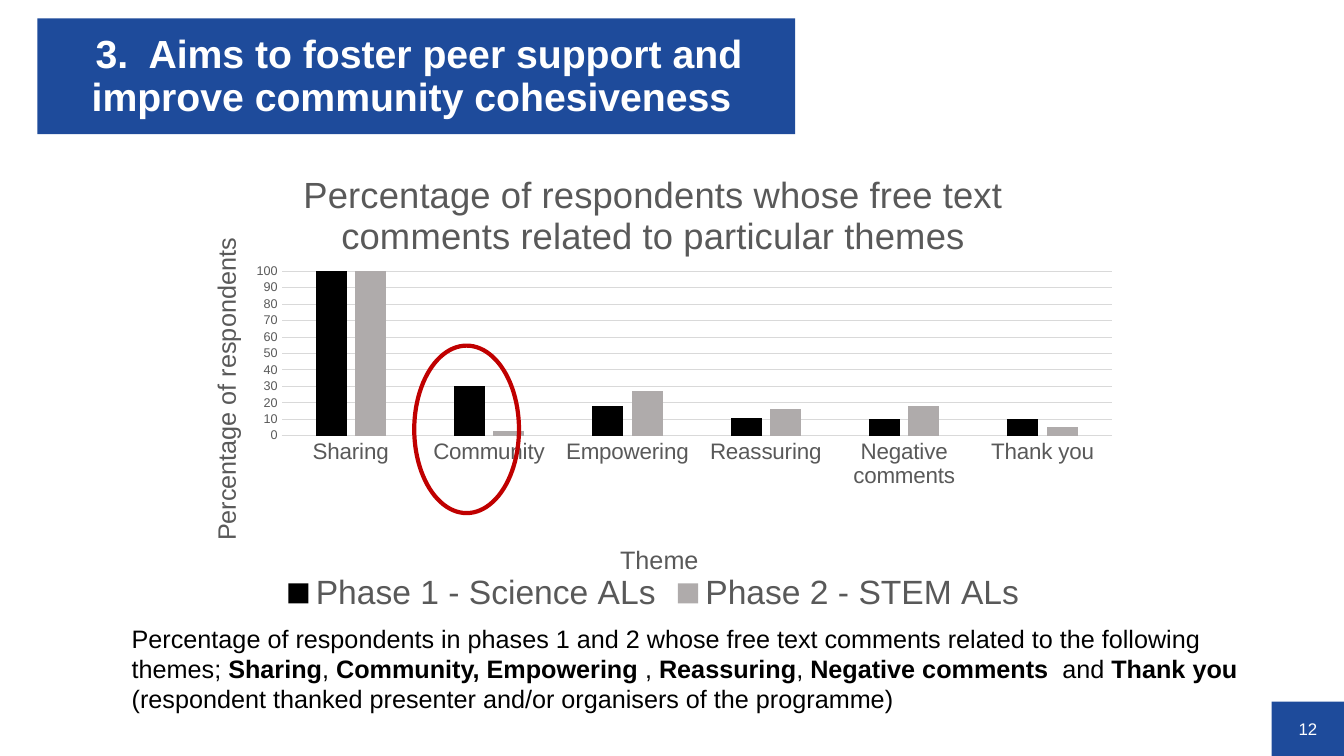
from dataclasses import dataclass

from lxml.etree import SubElement
from pptx import Presentation
from pptx.chart.data import CategoryChartData
from pptx.dml.color import RGBColor
from pptx.enum.chart import XL_CHART_TYPE, XL_LEGEND_POSITION, XL_TICK_MARK
from pptx.enum.shapes import MSO_SHAPE
from pptx.enum.text import MSO_ANCHOR, PP_ALIGN
from pptx.oxml import parse_xml
from pptx.oxml.ns import nsdecls, qn
from pptx.util import Cm, Pt


@dataclass(frozen=True)
class Theme:
    font: str = "Arial"
    blue: RGBColor = RGBColor(0x1E, 0x4B, 0x9B)
    red: RGBColor = RGBColor(0xC0, 0x00, 0x00)
    white: RGBColor = RGBColor(0xFF, 0xFF, 0xFF)
    black: RGBColor = RGBColor(0x00, 0x00, 0x00)
    silver: RGBColor = RGBColor(0xAF, 0xAB, 0xAB)
    label: RGBColor = RGBColor(0x59, 0x59, 0x59)
    grid: RGBColor = RGBColor(0xD9, 0xD9, 0xD9)
    heading: int = 28
    chart_title: int = 26
    legend: int = 24
    body: int = 18
    category: int = 16
    page: int = 12
    scale: int = 9


THEME = Theme()

CATEGORIES = ["Sharing", "Community", "Empowering", "Reassuring",
              "Negative comments", "Thank you"]
SERIES = {
    "Phase 1 - Science ALs": ([100, 30, 18, 11, 10, 10], THEME.black),
    "Phase 2 - STEM ALs": ([100, 3, 27, 16, 18, 5], THEME.silver),
}
# Caption pieces: (text, bold)
CAPTION = [
    ("Percentage of respondents in phases 1 and 2 whose free text comments "
     "related to the following themes; ", False),
    ("Sharing", True), (", ", False),
    ("Community, Empowering", True), (" , ", False),
    ("Reassuring", True), (", ", False),
    ("Negative comments", True), ("  and ", False),
    ("Thank you", True),
    (" (respondent thanked presenter and/or organisers of the programme)", False),
]


def apply_format(target, values):
    for name, value in values.items():
        setattr(target, name, value)


def style_font(font, size, color, bold=False):
    apply_format(font, {"name": THEME.font, "size": Pt(size), "bold": bold})
    font.color.rgb = color


def style_line(line, color, width):
    line.color.rgb = color
    line.width = Pt(width)


def place_by_fraction(layout, **fractions):
    """Fill a chart layout element with fractions of the chart area."""
    manual = SubElement(layout, qn("c:manualLayout"))
    if "w" in fractions:
        SubElement(manual, qn("c:layoutTarget")).set("val", "inner")
    for mode in ("xMode", "yMode"):
        SubElement(manual, qn(f"c:{mode}")).set("val", "edge")
    for name, value in fractions.items():
        SubElement(manual, qn(f"c:{name}")).set("val", str(value))


def add_heading(slide, box):
    title = slide.shapes.title
    apply_format(title, dict(zip(("left", "top", "width", "height"), box)))
    title.fill.solid()
    title.fill.fore_color.rgb = THEME.blue
    frame = title.text_frame
    apply_format(frame, {
        "margin_left": Cm(0.1), "margin_top": Cm(0.05), "margin_right": 0,
        "margin_bottom": 0, "word_wrap": True,
        "vertical_anchor": MSO_ANCHOR.MIDDLE,
    })
    paragraph = frame.paragraphs[0]
    paragraph.text = ("3.  Aims to foster peer support and "
                      "improve community cohesiveness")
    apply_format(paragraph, {"alignment": PP_ALIGN.LEFT, "line_spacing": 0.9})
    properties = paragraph._p.get_or_add_pPr()
    properties.set("marL", str(Cm(1.27)))
    properties.set("indent", str(Cm(0.1)))
    style_font(paragraph.runs[0].font, THEME.heading, THEME.white, True)


def add_axis_title(axis, text, x, y):
    title = axis.axis_title
    paragraph = title.text_frame.paragraphs[0]
    paragraph.text = text
    style_font(paragraph.runs[0].font, THEME.body, THEME.label)
    layout = title._element.find(qn("c:layout"))
    if layout is None:
        layout = parse_xml(f"<c:layout {nsdecls('c')}/>")
        title._element.find(qn("c:tx")).addnext(layout)
    place_by_fraction(layout, x=x, y=y)


def add_theme_chart(slide, box):
    data = CategoryChartData()
    data.categories = CATEGORIES
    for name, (values, _) in SERIES.items():
        data.add_series(name, values)
    chart = slide.shapes.add_chart(
        XL_CHART_TYPE.COLUMN_CLUSTERED, *box, data).chart
    style_font(chart.font, 10, THEME.black)

    # Title and legend
    paragraph = chart.chart_title.text_frame.paragraphs[0]
    paragraph.text = ("Percentage of respondents whose free text comments "
                      "related to particular themes")
    style_font(paragraph.runs[0].font, THEME.chart_title, THEME.label)
    chart.chart_title.include_in_layout = False
    chart.has_legend = True
    apply_format(chart.legend, {"position": XL_LEGEND_POSITION.BOTTOM,
                                "include_in_layout": False})
    style_font(chart.legend.font, THEME.legend, THEME.label)

    # Columns
    plot = chart.plots[0]
    apply_format(plot, {"gap_width": 219, "overlap": -27,
                        "vary_by_categories": False})
    for series, (_, color) in zip(plot.series, SERIES.values()):
        series.format.fill.solid()
        series.format.fill.fore_color.rgb = color

    # Axes
    category_axis, value_axis = chart.category_axis, chart.value_axis
    for axis, size in ((category_axis, THEME.category),
                       (value_axis, THEME.scale)):
        apply_format(axis, {"major_tick_mark": XL_TICK_MARK.NONE,
                            "minor_tick_mark": XL_TICK_MARK.NONE})
        style_font(axis.tick_labels.font, size, THEME.label)
    apply_format(value_axis, {"minimum_scale": 0, "maximum_scale": 100,
                              "major_unit": 10, "has_major_gridlines": True})
    style_line(category_axis.format.line, THEME.grid, 0.75)
    style_line(value_axis.major_gridlines.format.line, THEME.grid, 0.75)
    value_axis.format.line.fill.background()
    add_axis_title(category_axis, "Theme", 0.46, 0.83)
    add_axis_title(value_axis, "Percentage of respondents", 0.03, 0.18)

    # Plot area
    plot_area = chart._chartSpace.chart.plotArea
    layout = plot_area.find(qn("c:layout"))
    if layout is None:
        layout = parse_xml(f"<c:layout {nsdecls('c')}/>")
        plot_area.insert(0, layout)
    place_by_fraction(layout, x=0.11, y=0.26, w=0.87, h=0.35)


def add_highlight(slide, box):
    ellipse = slide.shapes.add_shape(MSO_SHAPE.OVAL, *box)
    ellipse.shadow.inherit = False
    ellipse.fill.background()
    style_line(ellipse.line, THEME.red, 3)


def add_caption(slide, box):
    frame = slide.shapes.add_textbox(*box).text_frame
    frame.word_wrap = True
    for text, bold in CAPTION:
        run = frame.paragraphs[0].add_run()
        run.text = text
        style_font(run.font, THEME.body, THEME.black, bold)


def add_page_number(slide, box):
    shape = slide.shapes.add_shape(MSO_SHAPE.RECTANGLE, *box)
    shape.shadow.inherit = False
    shape.fill.solid()
    shape.fill.fore_color.rgb = THEME.blue
    shape.line.fill.background()
    frame = shape.text_frame
    sides = ("left", "top", "right", "bottom")
    apply_format(frame, {f"margin_{side}": 0 for side in sides})
    frame.vertical_anchor = MSO_ANCHOR.MIDDLE
    paragraph = frame.paragraphs[0]
    paragraph.text = "12"
    paragraph.alignment = PP_ALIGN.CENTER
    style_font(paragraph.runs[0].font, THEME.page, THEME.white)


def main():
    presentation = Presentation()
    apply_format(presentation, {"slide_width": Cm(33.87),
                                "slide_height": Cm(19.05)})
    slide = presentation.slides.add_slide(presentation.slide_layouts[5])
    regions = [
        (add_page_number, (32.05, 17.68, 1.82, 1.37)),
        (add_theme_chart, (4.45, 3.76, 24.05, 11.84)),
        (add_caption, (3.07, 15.57, 29.57, 3.33)),
        (add_highlight, (10.44, 8.71, 2.64, 4.22)),
        (add_heading, (0.94, 0.46, 19.1, 2.92)),
    ]
    for add_region, box in regions:
        add_region(slide, [Cm(length) for length in box])
    presentation.save("out.pptx")


if __name__ == "__main__":
    main()
